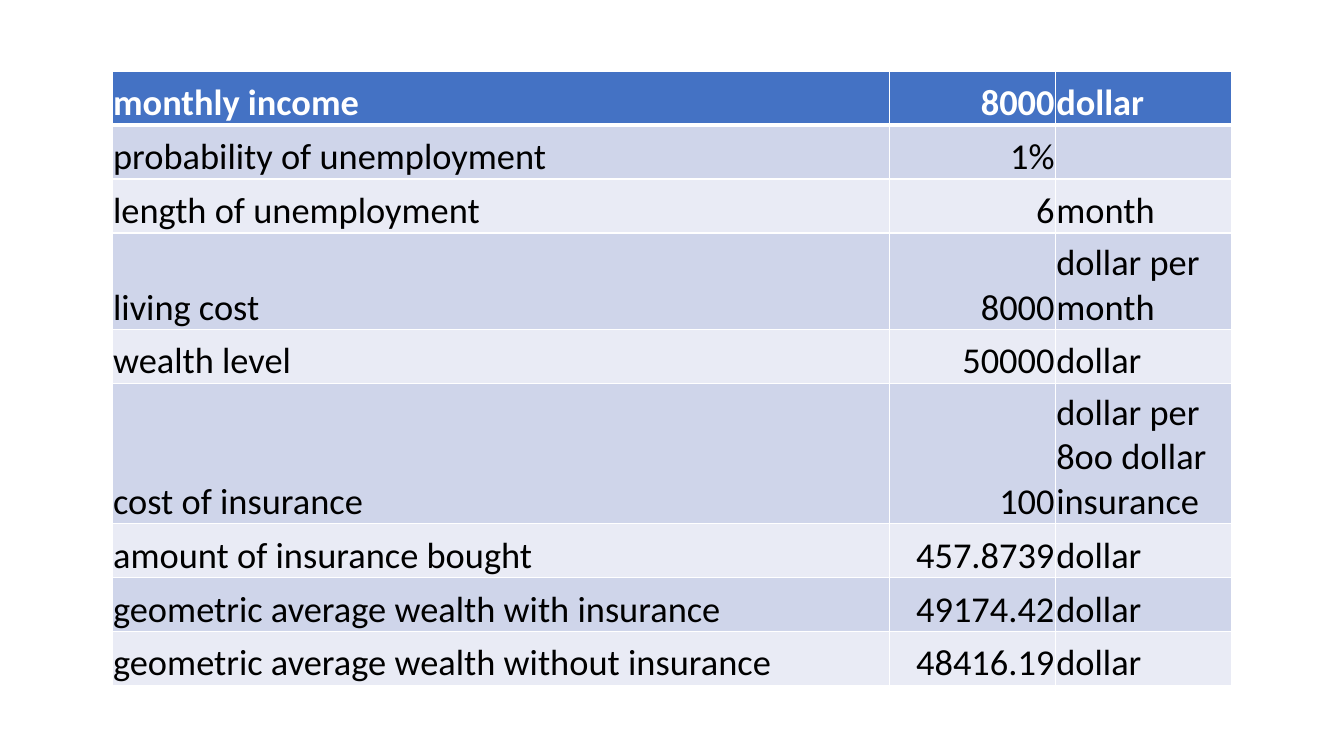
import pptx
import pptx.util
import pptx.dml.color
import pptx.enum.text
import lxml.etree
import pptx.oxml.ns

Cm = pptx.util.Cm
Pt = pptx.util.Pt
RGB = pptx.dml.color.RGBColor.from_string
ALIGN = pptx.enum.text.PP_ALIGN
qn = pptx.oxml.ns.qn

colors = {
    "header": "4472C4",
    "odd": "CFD5EA",
    "even": "E9EBF5",
    "white": "FFFFFF",
    "black": "000000",
}
cell_format = {
    "margin_left": Cm(0.02),
    "margin_right": Cm(0.02),
    "margin_top": Cm(0.02),
    "margin_bottom": Cm(0),
    "vertical_anchor": pptx.enum.text.MSO_ANCHOR.BOTTOM,
}
assumptions = [
    ("monthly income", "8000", "dollar"),
    ("probability of unemployment", "1%", ""),
    ("length of unemployment", "6", "month"),
    ("living cost", "8000", "dollar per month"),
    ("wealth level", "50000", "dollar"),
    ("cost of insurance", "100", "dollar per 8oo dollar insurance"),
    ("amount of insurance bought", "457.8739", "dollar"),
    ("geometric average wealth with insurance", "49174.42", "dollar"),
    ("geometric average wealth without insurance", "48416.19", "dollar"),
]
column_widths = [19.58, 4.19, 4.45]
column_aligns = [ALIGN.LEFT, ALIGN.RIGHT, ALIGN.LEFT]
line_height = 1.36
tall_rows = {3: 2.44, 5: 3.53}
row_heights = [tall_rows.get(row, line_height) for row in range(len(assumptions))]


def add_border(cell, side, points):
    border = lxml.etree.SubElement(
        cell._tc.get_or_add_tcPr(), qn("a:ln" + side), w=str(Pt(points)))
    fill = lxml.etree.SubElement(border, qn("a:solidFill"))
    lxml.etree.SubElement(fill, qn("a:srgbClr"), val=colors["white"])


presentation = pptx.Presentation()
presentation.slide_width = Cm(33.87)
presentation.slide_height = Cm(19.05)
slide = presentation.slides.add_slide(presentation.slide_layouts[6])

insurance_table = slide.shapes.add_table(
    len(assumptions), len(column_widths), Cm(2.83), Cm(1.79),
    Cm(sum(column_widths)), Cm(sum(row_heights))).table
for column, width in zip(insurance_table.columns, column_widths):
    column.width = Cm(width)
for row, height in zip(insurance_table.rows, row_heights):
    row.height = Cm(height)

for row, entries in enumerate(assumptions):
    is_header = row == 0
    band = "header" if is_header else "odd" if row % 2 else "even"
    borders = {"L": 1, "R": 1, "T": 3 if row == 1 else 1, "B": 3 if is_header else 1}
    for column, entry in enumerate(entries):
        cell = insurance_table.cell(row, column)
        for name, value in cell_format.items():
            setattr(cell, name, value)
        for side, points in borders.items():
            add_border(cell, side, points)
        cell.fill.solid()
        cell.fill.fore_color.rgb = RGB(colors[band])
        cell.text = entry
        paragraph = cell.text_frame.paragraphs[0]
        paragraph.alignment = column_aligns[column]
        for run in paragraph.runs:
            font_format = {"name": "Calibri", "size": Pt(26), "bold": is_header}
            for name, value in font_format.items():
                setattr(run.font, name, value)
            run.font.color.rgb = RGB(colors["white" if is_header else "black"])

presentation.save("out.pptx")
